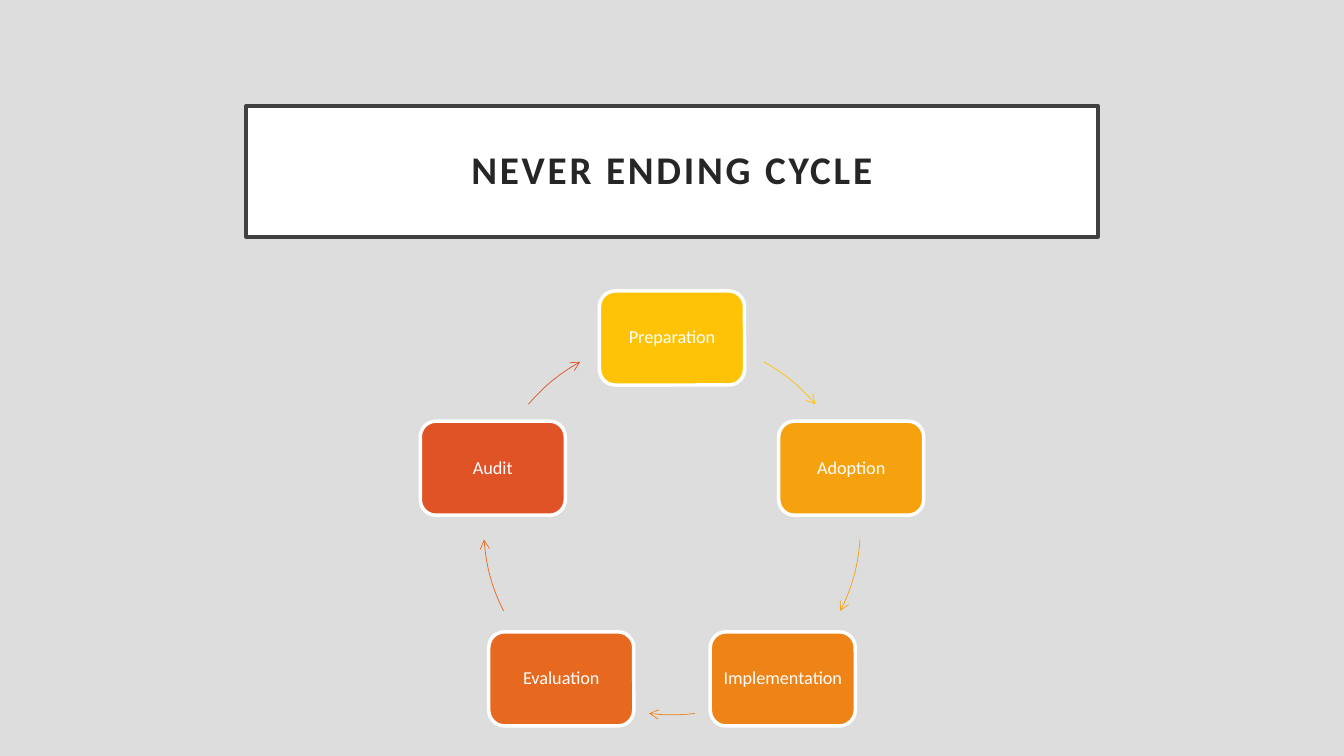
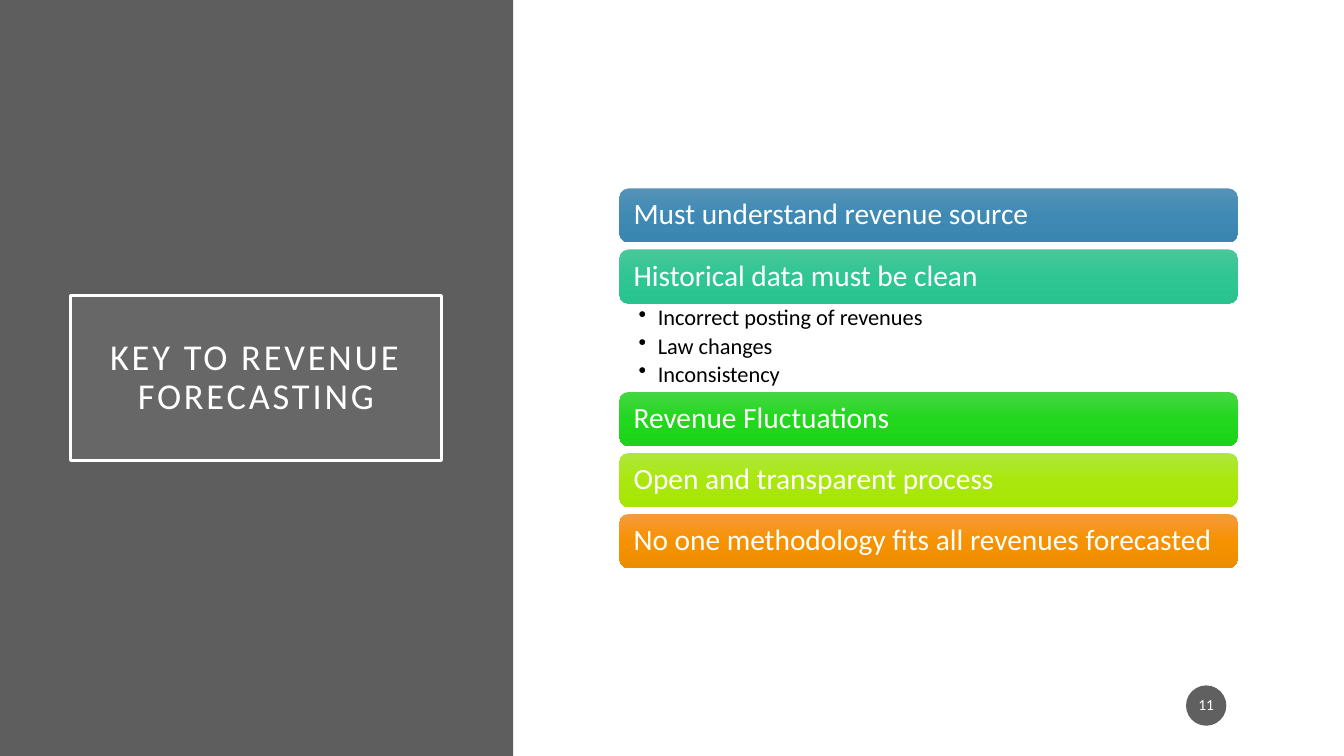
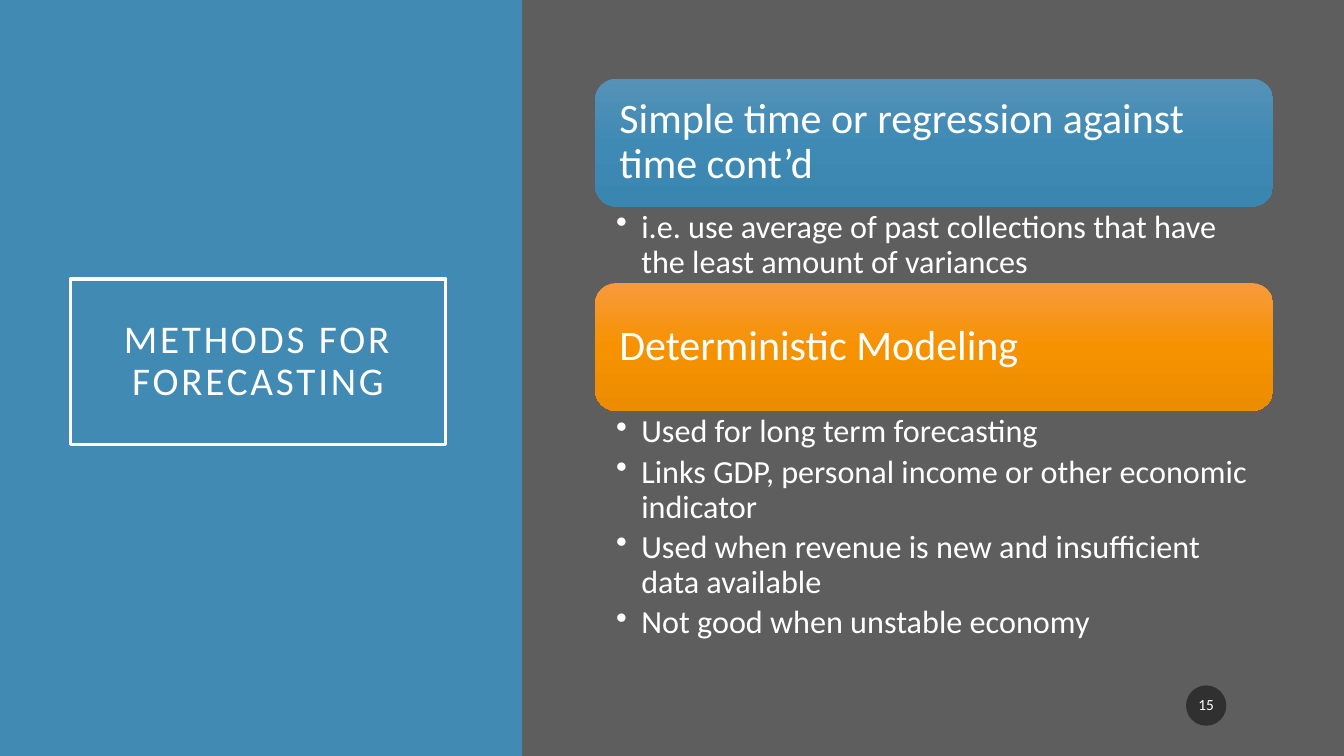
from math import cos, radians, sin
from copy import deepcopy

from lxml import etree
from pptx import Presentation
from pptx.dml.color import RGBColor
from pptx.enum.shapes import MSO_SHAPE
from pptx.enum.text import MSO_ANCHOR, MSO_AUTO_SIZE, PP_ALIGN
from pptx.oxml.ns import qn
from pptx.util import Pt

ARC, OVAL = MSO_SHAPE.ARC, MSO_SHAPE.OVAL
RECTANGLE, ROUNDED = MSO_SHAPE.RECTANGLE, MSO_SHAPE.ROUNDED_RECTANGLE
MIDDLE, TOP = MSO_ANCHOR.MIDDLE, MSO_ANCHOR.TOP
LEFT, CENTER = PP_ALIGN.LEFT, PP_ALIGN.CENTER
NO_AUTOFIT = MSO_AUTO_SIZE.NONE

WHITE = RGBColor(0xFF, 0xFF, 0xFF)
BLACK = RGBColor(0x00, 0x00, 0x00)
INK = RGBColor(0x26, 0x26, 0x26)
FRAME = RGBColor(0x40, 0x40, 0x40)
MIST = RGBColor(0xDD, 0xDD, 0xDD)
SLATE = RGBColor(0x5E, 0x5E, 0x5E)
HAZE = RGBColor(0x9E, 0x9E, 0x9E)
COAL = RGBColor(0x1D, 0x1D, 0x1D)
STEEL = RGBColor(0x41, 0x8A, 0xB3)
GOLD = RGBColor(0xFE, 0xC3, 0x06)
AMBER = RGBColor(0xF6, 0xA1, 0x0E)
TANGERINE = RGBColor(0xEE, 0x83, 0x17)
PUMPKIN = RGBColor(0xE7, 0x69, 0x1F)
RUST = RGBColor(0xDF, 0x53, 0x27)
BLUES = RGBColor(0x55, 0x92, 0xB7), RGBColor(0x3F, 0x8A, 0xB5), RGBColor(0x39, 0x86, 0xB1)
TEALS = RGBColor(0x4A, 0xC7, 0x9A), RGBColor(0x2F, 0xC6, 0x94), RGBColor(0x28, 0xC3, 0x8F)
GREENS = RGBColor(0x44, 0xD7, 0x42), RGBColor(0x22, 0xD7, 0x1E), RGBColor(0x1B, 0xD4, 0x17)
LIMES = RGBColor(0xAE, 0xE7, 0x3E), RGBColor(0xAA, 0xE8, 0x0D), RGBColor(0xA6, 0xE6, 0x05)
ORANGES = RGBColor(0xF7, 0x9A, 0x3D), RGBColor(0xF6, 0x92, 0x00), RGBColor(0xEC, 0x8C, 0x00)


class Deck:
    font = "Calibri"
    width, height = 960, 540
    border = 2.5
    line_spacing = 0.9

    def __init__(self):
        self.prs = Presentation()
        self.prs.slide_width, self.prs.slide_height = Pt(self.width), Pt(self.height)
        self.slide = None

    def add_slide(self, background):
        self.slide = self.prs.slides.add_slide(self.prs.slide_layouts[5])
        fill = self.slide.background.fill
        fill.solid()
        fill.fore_color.rgb = background

    def paint(self, shape, color, opacity=100):
        shape.fill.solid()
        shape.fill.fore_color.rgb = color
        if opacity < 100:
            rgb = shape._element.spPr.find(qn("a:solidFill")).find(qn("a:srgbClr"))
            etree.SubElement(rgb, qn("a:alpha")).set("val", str(opacity * 1000))

    def outline(self, shape, color, weight):
        shape.line.color.rgb = color
        shape.line.width = Pt(weight)

    def shape(self, kind, box):
        shape = self.slide.shapes.add_shape(kind, *map(Pt, box))
        shape.shadow.inherit = False
        shape.line.fill.background()
        return shape

    def set_text(self, shape, lines, size, color, insets, align=LEFT, anchor=MIDDLE):
        frame = shape.text_frame
        frame.text = "\n".join(lines)
        frame.word_wrap = True
        frame.auto_size = NO_AUTOFIT
        frame.vertical_anchor = anchor
        frame.margin_left, frame.margin_top, frame.margin_right, frame.margin_bottom = map(Pt, insets)
        for paragraph in frame.paragraphs:
            paragraph.alignment = align
            paragraph.line_spacing = self.line_spacing
            for run in paragraph.runs:
                run.font.name = self.font
                run.font.size = Pt(size)
                run.font.color.rgb = color
        return frame

    def title(self, text, box, size=28, color=WHITE, border=WHITE, bold=False):
        title = self.slide.shapes.title
        title.left, title.top, title.width, title.height = map(Pt, box)
        self.outline(title, border, self.border)
        frame = self.set_text(title, [text], size, color, [14.4] * 4, CENTER)
        run = frame.paragraphs[0].runs[0]
        run.font.bold = bold
        run._r.get_or_add_rPr().set("spc", "200")
        return title

    def side_panel(self, width, color):
        panel = self.shape(RECTANGLE, (0, 0, width, self.height))
        self.paint(panel, color)
        self.slide.shapes._spTree.insert(2, panel._element)

    def page_badge(self, number):
        badge = self.shape(OVAL, (847.2, 489.6, 28.8, 28.8))
        self.paint(badge, COAL, 70)
        self.set_text(badge, [number], 11, WHITE, (1.4, 3.6, 1.4, 3.6), CENTER)

    def cycle(self, center, radius, steps, sweeps):
        middle_x, middle_y = center
        width, height = 103.6, 67.2
        ring = (middle_x - radius, middle_y - radius, 2 * radius, 2 * radius)
        for index, ((label, color), sweep) in enumerate(zip(steps, sweeps)):
            angle = radians(360 / len(steps) * index)
            x = middle_x + radius * sin(angle) - width / 2
            y = middle_y - radius * cos(angle) - height / 2
            step = self.shape(ROUNDED, (x, y, width, height))
            self.paint(step, color)
            self.outline(step, WHITE, self.border)
            self.set_text(step, [label], 13, WHITE, [3.6] * 4, CENTER)
            self.arc_arrow(ring, sweep, color)

    def arc_arrow(self, ring, sweep, color):
        arrow = self.shape(ARC, ring)
        arrow.fill.background()
        for index, clock_angle in enumerate(sweep):
            arrow.adjustments[index] = (clock_angle - 90) % 360 * 0.6
        self.outline(arrow, color, 0.5)
        line = arrow._element.spPr.find(qn("a:ln"))
        etree.SubElement(line, qn("a:tailEnd")).set("type", "arrow")

    def bar(self, text, box, size, inset, shades):
        bar = self.shape(ROUNDED, box)
        bar.fill.gradient()
        bar.fill.gradient_angle = 270
        stops = bar._element.spPr.find(qn("a:gradFill")).find(qn("a:gsLst"))
        stops.append(deepcopy(stops[-1]))
        for index, (stop, shade) in enumerate(zip(bar.fill.gradient_stops, shades)):
            stop.position = index / 2
            stop.color.rgb = shade
        self.set_text(bar, [text], size, WHITE, [inset] * 4)

    def bullets(self, lines, box, size, color, insets, indent):
        details = self.slide.shapes.add_textbox(*map(Pt, box))
        frame = self.set_text(details, lines, size, color, insets, anchor=TOP)
        for paragraph in frame.paragraphs:
            paragraph.space_after = Pt(size * 0.18)
            properties = paragraph._p.get_or_add_pPr()
            properties.set("marL", str(Pt(indent)))
            properties.set("indent", str(-Pt(indent)))
            etree.SubElement(properties, qn("a:buChar")).set("char", "•")

    def bar_list(self, left, top, width, bar_height, gap, bar_style, bullet_style, sections):
        for heading, shades, details, details_height in sections:
            self.bar(heading, (left, top, width, bar_height), *bar_style, shades)
            top += bar_height
            if details:
                self.bullets(details, (left, top, width, details_height), *bullet_style)
            top += details_height or gap


def main():
    deck = Deck()

    deck.add_slide(MIST)
    banner = deck.title("NEVER ENDING CYCLE", (175.8, 75.6, 608.4, 93.6),
                        color=INK, border=FRAME, bold=True)
    deck.paint(banner, WHITE)
    deck.cycle(
        (480, 376), 134.6,
        [("Preparation", GOLD), ("Adoption", AMBER), ("Implementation", TANGERINE),
         ("Evaluation", PUMPKIN), ("Audit", RUST)],
        [(29.2, 49.6), (94, 116.7), (173, 187), (243.3, 266), (310.4, 330.8)])

    deck.add_slide(WHITE)
    deck.side_panel(366.5, SLATE)
    framed = deck.title("KEY TO REVENUE FORECASTING", (50.4, 211, 265, 118), size=26)
    deck.paint(framed, HAZE, 15)
    deck.page_badge("11")
    deck.bar_list(
        442.5, 134.6, 441.5, 38.6, 5, (21, 8.2), (16, BLACK, (13.7, 2.2, 11.5, 2.2), 13.7),
        [("Must understand revenue source", BLUES, [], 0),
         ("Historical data must be clean", TEALS,
          ["Incorrect posting of revenues", "Law changes", "Inconsistency"], 63.2),
         ("Revenue Fluctuations", GREENS, [], 0),
         ("Open and transparent process", LIMES, [], 0),
         ("No one methodology fits all revenues forecasted", ORANGES, [], 0)])

    deck.add_slide(SLATE)
    deck.side_panel(373, STEEL)
    deck.title("METHODS FOR FORECASTING", (50.4, 199.4, 268, 118))
    deck.page_badge("15")
    deck.bar_list(
        425, 56.2, 484.5, 91.3, 0, (30, 13), (23, WHITE, (15.1, 2.9, 16.6, 2.9), 18),
        [("Simple time or regression against time cont’d", BLUES,
          ["i.e. use average of past collections that have the least amount of variances"], 54.7),
         ("Deterministic Modeling", ORANGES,
          ["Used for long term forecasting",
           "Links GDP, personal income or other economic indicator",
           "Used when revenue is new and insufficient data available",
           "Not good when unstable economy"], 166.3)])

    deck.prs.save("out.pptx")


if __name__ == "__main__":
    main()
